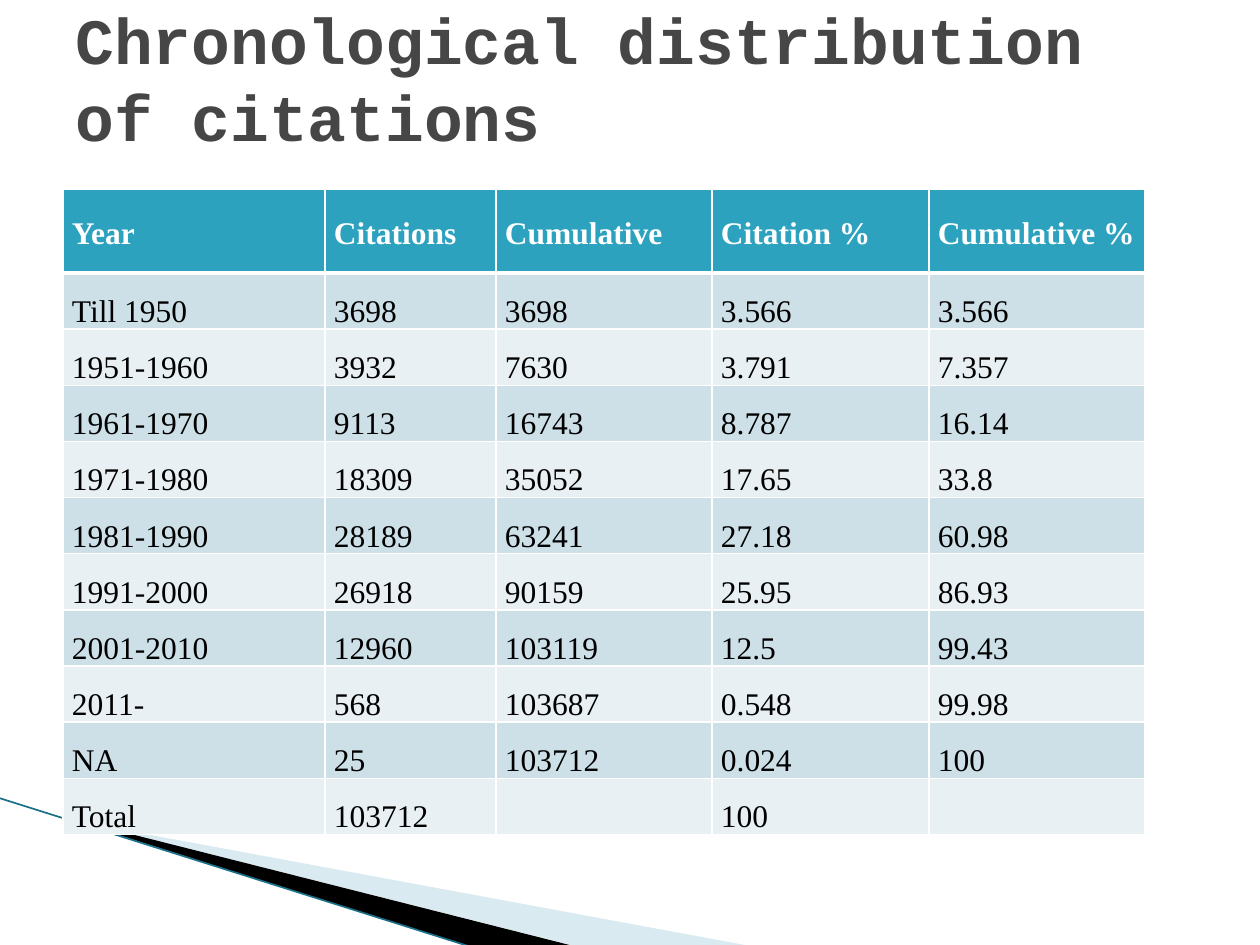
from lxml.etree import SubElement
from pptx import Presentation
from pptx.dml.color import RGBColor
from pptx.enum.shapes import MSO_CONNECTOR as LINK
from pptx.enum.text import MSO_ANCHOR as ANCHOR, PP_ALIGN as ALIGN
from pptx.oxml.ns import qn
from pptx.util import Pt

PX = 914400 // 126
COLORS = {
    "title": "464646", "head": "2DA2BF", "odd": "CDE0E8", "even": "E8F0F4",
    "white": "FFFFFF", "black": "000000", "pale": "A0CBDC", "edge": "1A7088",
}
TITLE = "Chronological distribution of citations"
HEAD = ["Year", "Citations", "Cumulative", "Citation %", "Cumulative %"]
ROWS = [
    ["Till 1950", "3698", "3698", "3.566", "3.566"],
    ["1951-1960", "3932", "7630", "3.791", "7.357"],
    ["1961-1970", "9113", "16743", "8.787", "16.14"],
    ["1971-1980", "18309", "35052", "17.65", "33.8"],
    ["1981-1990", "28189", "63241", "27.18", "60.98"],
    ["1991-2000", "26918", "90159", "25.95", "86.93"],
    ["2001-2010", "12960", "103119", "12.5", "99.43"],
    ["2011-", "568", "103687", "0.548", "99.98"],
    ["NA", "25", "103712", "0.024", "100"],
    ["Total", "103712", "", "100", ""],
]
WIDTHS = [262, 171, 216, 217, 216]
HEAD_H, BODY_H = 84, 562
WEDGES = [  # frame, outline, color, opacity
    ((98, 689, 524, 199), [(69, 820), (750, 946), (575, 946), (69, 819)], "pale", 40),
    ((-8, 798, 524, 116), [(67, 818), (573, 946), (474, 948), (68, 819)], "black", 100),
]


def px(*vals):
    return [v * PX for v in vals]


def rgb(name):
    return RGBColor.from_string(COLORS[name])


def write(frame, text, font, size, color, bold=False, align=ALIGN.LEFT, space=1.0):
    para = frame.paragraphs[0]
    para.alignment = align
    para.line_spacing = space
    run = para.add_run()
    run.text = text
    run.font.name = font
    run.font.size = Pt(size)
    run.font.bold = bold
    run.font.color.rgb = rgb(color)


def set_frame(shape, frame, points):
    """Give an outline a frame of its own, which the points may overrun."""
    left, top, width, height = frame
    shape.left, shape.top, shape.width, shape.height = px(*frame)
    path = next(shape._element.iter(qn("a:path")))
    path.set("w", str(width))
    path.set("h", str(height))
    dx = min(x for x, y in points) - left
    dy = min(y for x, y in points) - top
    for pt in path.iter(qn("a:pt")):
        pt.set("x", str(int(pt.get("x")) + dx))
        pt.set("y", str(int(pt.get("y")) + dy))


def add_wedge(slide, frame, points, color, alpha):
    build = slide.shapes.build_freeform(*points[0], scale=PX)
    build.add_line_segments(points[1:], close=True)
    shape = build.convert_to_shape()
    set_frame(shape, frame, points)
    shape.shadow.inherit = False
    shape.line.fill.background()
    shape.fill.solid()
    shape.fill.fore_color.rgb = rgb(color)
    if alpha < 100:
        fill = shape.fill._xPr.find(qn("a:solidFill"))
        SubElement(fill[0], qn("a:alpha"), val=str(alpha * 1000))


def add_edge(slide):
    line = slide.shapes.add_connector(LINK.STRAIGHT, *px(-1, 798, 468, 946))
    line.line.color.rgb = rgb("edge")
    line.line.width = Pt(0.95)
    SubElement(line._element.spPr, qn("a:effectLst"))


def fill_cell(cell, color, base):
    """Fill a cell and rule it in white, with a base line of the given points."""
    props = cell._tc.get_or_add_tcPr()
    for side, width in (("L", 1), ("R", 1), ("T", 1), ("B", base)):
        rule = SubElement(props, qn(f"a:ln{side}"), w=str(Pt(width)))
        paint = SubElement(rule, qn("a:solidFill"))
        SubElement(paint, qn("a:srgbClr"), val=COLORS["white"])
    cell.fill.solid()
    cell.fill.fore_color.rgb = rgb(color)


def add_grid(slide):
    data = [HEAD] + ROWS
    box = px(63, 189, sum(WIDTHS), HEAD_H + BODY_H)
    table = slide.shapes.add_table(len(data), len(HEAD), *box).table
    for col, width in zip(table.columns, WIDTHS):
        col.width = width * PX
    for r, texts in enumerate(data):
        top = r == 0
        table.rows[r].height = HEAD_H * PX if top else BODY_H * PX // len(ROWS)
        color = "head" if top else ("odd" if r % 2 else "even")
        for c, text in enumerate(texts):
            cell = table.cell(r, c)
            cell.margin_left = cell.margin_right = 9 * PX
            cell.margin_top = cell.margin_bottom = 0
            cell.vertical_anchor = ANCHOR.MIDDLE if top else ANCHOR.BOTTOM
            fill_cell(cell, color, 3 if top else 1)
            if text:
                write(cell.text_frame, text, "Times New Roman", 18,
                      "white" if top else "black", bold=top,
                      align=ALIGN.JUSTIFY, space=1.15)


def add_title(slide):
    frame = slide.shapes.add_textbox(*px(63, 38, 1134, 158)).text_frame
    frame.word_wrap = True
    frame.vertical_anchor = ANCHOR.MIDDLE
    frame.margin_top, frame.margin_bottom = px(0, 80)
    write(frame, TITLE, "Courier New", 36.9, "title", bold=True)


def main():
    deck = Presentation()
    deck.slide_width, deck.slide_height = px(1260, 945)
    slide = deck.slides.add_slide(deck.slide_layouts[6])
    for wedge in WEDGES:
        add_wedge(slide, *wedge)
    add_edge(slide)
    add_grid(slide)
    add_title(slide)
    deck.save("out.pptx")


if __name__ == "__main__":
    main()
